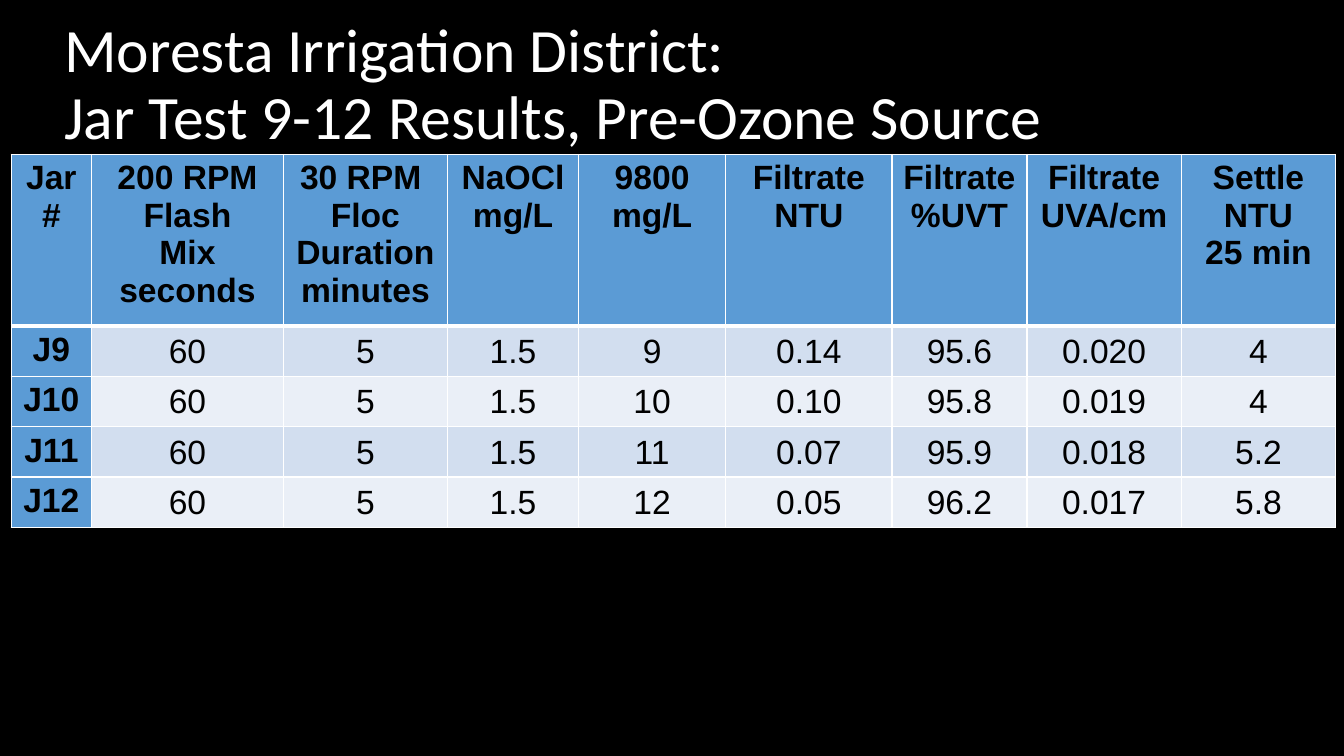
import pptx
import pptx.dml.color
import pptx.enum.text
import pptx.oxml.ns
import pptx.util
from lxml import etree

Cm = pptx.util.Cm
Pt = pptx.util.Pt
MIDDLE = pptx.enum.text.MSO_ANCHOR.MIDDLE
CENTER = pptx.enum.text.PP_ALIGN.CENTER

COLORS = {
    "background": "000000",
    "title": "FFFFFF",
    "text": "000000",
    "border": "FFFFFF",
    "heading": "5B9BD5",
    "odd_row": "D2DEEF",
    "even_row": "EAEFF7",
}
COLUMN_WIDTHS = [2.03, 4.83, 4.14, 3.3, 3.71, 4.19, 3.4, 3.89, 3.89]
HEADER_HEIGHT = 4.03
ROW_HEIGHT = 1.2
TITLE = "Moresta Irrigation District: \vJar Test 9-12 Results, Pre-Ozone Source"
JAR_TESTS = [
    ["Jar\n#", "200 RPM\nFlash\nMix\nseconds", "30 RPM \nFloc\nDuration\nminutes",
     "NaOCl\nmg/L", "9800\nmg/L", "Filtrate\nNTU", "Filtrate\n%UVT",
     "Filtrate\nUVA/cm", "Settle\nNTU\n25 min"],
    ["J9", "60", "5", "1.5", "9", "0.14", "95.6", "0.020", "4"],
    ["J10", "60", "5", "1.5", "10", "0.10", "95.8", "0.019", "4"],
    ["J11", "60", "5", "1.5", "11", "0.07", "95.9", "0.018", "5.2"],
    ["J12", "60", "5", "1.5", "12", "0.05", "96.2", "0.017", "5.8"],
]


def set_fill(fill, color):
    fill.solid()
    fill.fore_color.rgb = pptx.dml.color.RGBColor.from_string(COLORS[color])


def format_runs(para, font, size, color, bold=False):
    for span in para.runs:
        span.font.name = font
        span.font.size = Pt(size)
        span.font.bold = bold
        set_fill(span.font.fill, color)


def add_title(page):
    box = page.shapes.add_textbox(Cm(1.37), Cm(0.33), Cm(30.18), Cm(3.68))
    frame = box.text_frame
    frame.word_wrap = True
    frame.vertical_anchor = MIDDLE
    para = frame.paragraphs[0]
    para.text = TITLE
    para.line_spacing = 0.9
    format_runs(para, "Calibri", 44, "title")


def set_borders(cell, top, bottom):
    qn = pptx.oxml.ns.qn
    properties = cell._tc.get_or_add_tcPr()
    for side, width in (("L", 1), ("R", 1), ("T", top), ("B", bottom)):
        line = etree.SubElement(properties, qn(f"a:ln{side}"), w=str(Pt(width)))
        solid = etree.SubElement(line, qn("a:solidFill"))
        etree.SubElement(solid, qn("a:srgbClr"), val=COLORS["border"])


def fill_cell(cell, text, row, column):
    heading = row == 0 or column == 0
    set_borders(cell, 3 if row == 1 else 1, 3 if row == 0 else 1)
    set_fill(cell.fill, "heading" if heading else "odd_row" if row % 2 else "even_row")
    if not heading:
        cell.vertical_anchor = MIDDLE
        cell.margin_left = cell.margin_right = cell.margin_top = Cm(0.03)
        cell.margin_bottom = 0
    cell.text_frame.text = text
    for para in cell.text_frame.paragraphs:
        para.alignment = CENTER
        format_runs(para, "Arial", 24, "text", heading)


def add_results_table(page):
    body_rows = len(JAR_TESTS) - 1
    table = page.shapes.add_table(
        len(JAR_TESTS), len(COLUMN_WIDTHS), Cm(0.28), Cm(3.89),
        Cm(sum(COLUMN_WIDTHS)), Cm(HEADER_HEIGHT + body_rows * ROW_HEIGHT)).table
    table.first_col = True
    for column, width in zip(table.columns, COLUMN_WIDTHS):
        column.width = Cm(width)
    for row, texts in enumerate(JAR_TESTS):
        table.rows[row].height = Cm(ROW_HEIGHT if row else HEADER_HEIGHT)
        for column, text in enumerate(texts):
            fill_cell(table.cell(row, column), text, row, column)


def main():
    deck = pptx.Presentation()
    deck.slide_width = Cm(33.87)
    deck.slide_height = Cm(19.05)
    page = deck.slides.add_slide(deck.slide_layouts[6])
    set_fill(page.background.fill, "background")
    add_title(page)
    add_results_table(page)
    deck.save("out.pptx")


if __name__ == "__main__":
    main()
